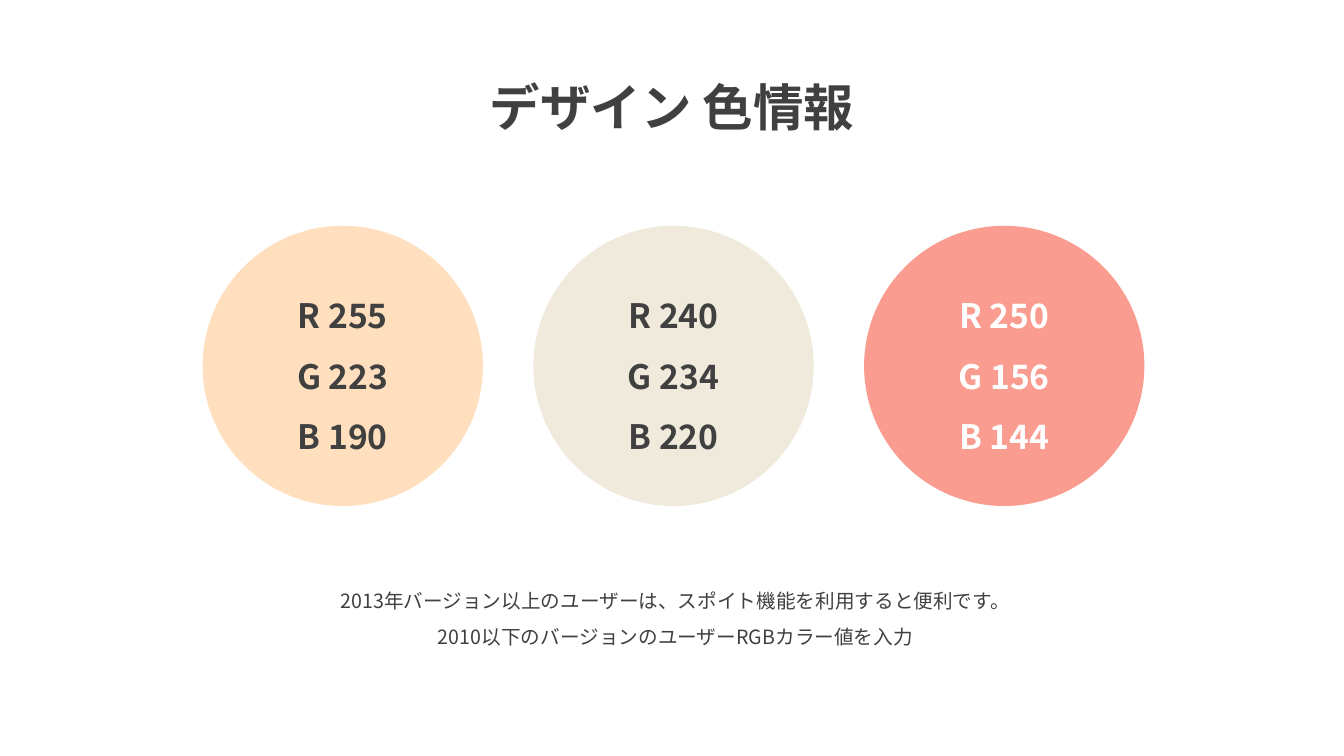
from dataclasses import dataclass

from lxml.etree import SubElement
from pptx import Presentation
from pptx.dml.color import RGBColor
from pptx.enum.shapes import MSO_SHAPE as Shape
from pptx.enum.text import MSO_ANCHOR as Anchor, MSO_AUTO_SIZE as AutoSize, PP_ALIGN as Align
from pptx.oxml.ns import qn
from pptx.util import Inches, Pt

TITLE = "デザイン 色情報"
SWATCHES = [  # label values, fill, text colour name
    ((255, 223, 190), "FFDFBE", "dark"),
    ((240, 234, 220), "F0EADC", "dark"),
    ((250, 156, 144), "FA9C90", "light"),
]
NOTES = [
    "2013年バージョン以上のユーザーは、スポイト機能を利用すると便利です。",
    "2010以下のバージョンのユーザーRGBカラー値を入力",
]


@dataclass(frozen=True)
class Theme:
    font: str = "Noto Sans CJK KR"
    dark: str = "404040"
    light: str = "FFFFFF"
    title_size: int = 36
    swatch_size: int = 24
    note_size: int = 14
    line_spacing: float = 1.5


THEME = Theme()
SWATCH_LEFT, SWATCH_TOP = 2.01, 2.24
DIAMETER, PITCH = 2.78, 3.28


def write_lines(shape, lines, size, color, bold=False, anchor=Anchor.TOP, auto_size=AutoSize.NONE):
    frame = shape.text_frame
    frame.text = "\n".join(lines)
    frame.word_wrap = True
    frame.vertical_anchor = anchor
    frame.auto_size = auto_size
    for para in frame.paragraphs:
        para.alignment = Align.CENTER
        para.line_spacing = THEME.line_spacing
        para.space_before = Pt(0)
        font = para.font
        font.name, font.size, font.bold = THEME.font, Pt(size), bold
        font.color.rgb = RGBColor.from_string(color)
        east_asian = SubElement(para._p.pPr.find(qn("a:defRPr")), qn("a:ea"))
        east_asian.set("typeface", THEME.font)


def add_swatch(slide, index, values, fill, text_color):
    circle = slide.shapes.add_shape(
        Shape.OVAL, Inches(SWATCH_LEFT + index * PITCH), Inches(SWATCH_TOP),
        Inches(DIAMETER), Inches(DIAMETER))
    circle.shadow.inherit = False
    circle.fill.solid()
    circle.fill.fore_color.rgb = RGBColor.from_string(fill)
    circle.line.fill.background()
    lines = [f"{channel} {value}" for channel, value in zip("RGB", values)]
    write_lines(circle, lines, THEME.swatch_size, text_color, bold=True, anchor=Anchor.MIDDLE)


def main():
    deck = Presentation()
    deck.slide_width, deck.slide_height = Inches(13.33), Inches(7.5)
    slide = deck.slides.add_slide(deck.slide_layouts.get_by_name("Title Only"))

    title = slide.shapes.title
    title.left, title.top = Inches(4.24), Inches(0.4)
    title.width, title.height = Inches(4.85), Inches(0.91)
    write_lines(title, [TITLE], THEME.title_size, THEME.dark, bold=True,
                auto_size=AutoSize.SHAPE_TO_FIT_TEXT)

    for index, (values, fill, color_name) in enumerate(SWATCHES):
        add_swatch(slide, index, values, fill, getattr(THEME, color_name))

    notes = slide.shapes.add_textbox(Inches(2.52), Inches(5.68), Inches(8.36), Inches(0.77))
    write_lines(notes, NOTES, THEME.note_size, THEME.dark,
                auto_size=AutoSize.SHAPE_TO_FIT_TEXT)

    deck.save("out.pptx")


if __name__ == "__main__":
    main()
